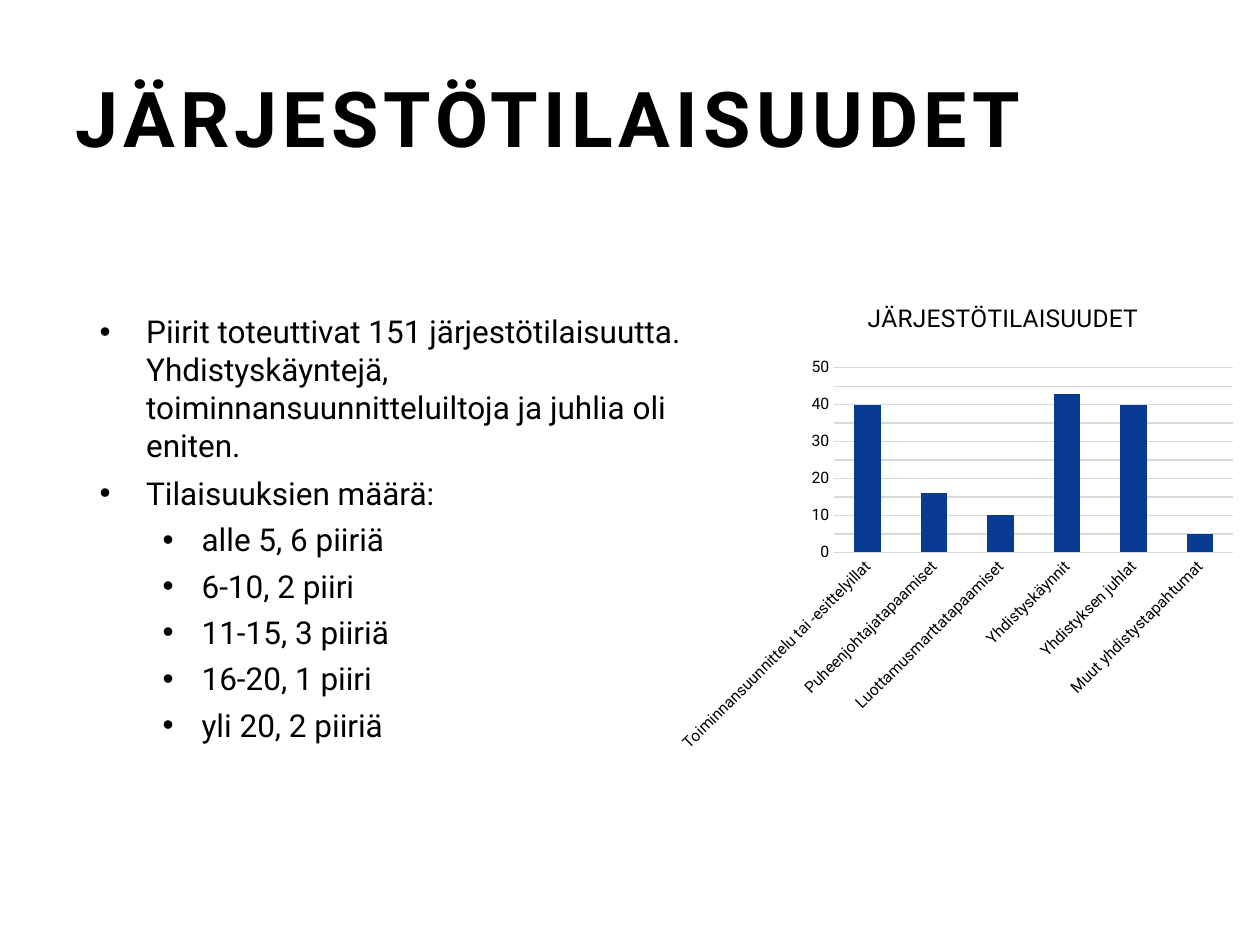
import copy
import dataclasses

import pptx
import pptx.chart.data
import pptx.dml.color
import pptx.enum.chart
import pptx.enum.text
import pptx.oxml
import pptx.oxml.ns
import pptx.util

Inches = pptx.util.Inches
Pt = pptx.util.Pt
qn = pptx.oxml.ns.qn


@dataclasses.dataclass(frozen=True)
class Theme:
    font: str = "Roboto"
    text: str = "000000"
    bar: str = "0A3B93"
    grid: str = "D9D9D9"
    title_size: float = 44
    body_size: float = 18
    chart_title_size: float = 14
    chart_size: float = 10
    axis_size: float = 9


# Per list level: text indent, bullet offset (inches), space before (points)
LEVELS = [(0.37, -0.37, 5.8), (0.81, -0.31, 4.9)]

BULLETS = [
    (0, "Piirit toteuttivat 151 järjestötilaisuutta. Yhdistyskäyntejä, "
        "toiminnansuunnitteluiltoja ja juhlia oli eniten."),
    (0, "Tilaisuuksien määrä:"),
    (1, "alle 5, 6 piiriä"),
    (1, "6-10, 2 piiri"),
    (1, "11-15, 3 piiriä"),
    (1, "16-20, 1 piiri"),
    (1, "yli 20, 2 piiriä"),
]

EVENTS = {
    "Toiminnansuunnittelu tai -esittelyillat": 40,
    "Puheenjohtajatapaamiset": 16,
    "Luottamusmarttatapaamiset": 10,
    "Yhdistyskäynnit": 43,
    "Yhdistyksen juhlat": 40,
    "Muut yhdistystapahtumat": 5,
}


class SlideBuilder:
    def __init__(self, slide, theme):
        self.slide = slide
        self.theme = theme

    def color(self, value):
        return pptx.dml.color.RGBColor.from_string(value)

    def style_font(self, font, size, bold=False):
        font.name = self.theme.font
        font.size = Pt(size)
        font.bold = bold
        font.color.rgb = self.color(self.theme.text)

    def place(self, shape, left, top, width, height):
        shape.left, shape.top = Inches(left), Inches(top)
        shape.width, shape.height = Inches(width), Inches(height)

    def title(self, text, *bounds):
        box = self.slide.shapes.title
        self.place(box, *bounds)
        frame = box.text_frame
        frame.text = text
        frame.auto_size = pptx.enum.text.MSO_AUTO_SIZE.NONE
        frame.vertical_anchor = pptx.enum.text.MSO_ANCHOR.MIDDLE
        para = frame.paragraphs[0]
        para.alignment = pptx.enum.text.PP_ALIGN.LEFT
        span = para.runs[0]
        self.style_font(span.font, self.theme.title_size, bold=True)
        span.font._element.set("spc", "300")

    def bullets(self, items, *bounds):
        box = self.slide.placeholders[1]
        self.place(box, *bounds)
        frame = box.text_frame
        frame.text = "\n".join(text for _, text in items)
        frame.auto_size = pptx.enum.text.MSO_AUTO_SIZE.NONE
        for index, (para, (level, _)) in enumerate(zip(frame.paragraphs, items)):
            indent, offset, space = LEVELS[level]
            para.level = level
            para.space_before = Pt(space if index else 0)
            properties = para._p.get_or_add_pPr()
            properties.set("marL", str(Inches(indent)))
            properties.set("indent", str(Inches(offset)))
            bullet = properties.makeelement(qn("a:buChar"), {"char": "•"})
            properties.append(bullet)
            self.style_font(para.runs[0].font, self.theme.body_size)

    def chart_layout(self, parent, position, **settings):
        """Put a manual layout, in fractions of the chart, into a chart part."""
        for old in parent.findall(qn("c:layout")):
            parent.remove(old)
        layout = parent.makeelement(qn("c:layout"), {})
        manual = layout.makeelement(qn("c:manualLayout"), {})
        layout.append(manual)
        for name, value in settings.items():
            manual.append(manual.makeelement(qn(f"c:{name}"), {"val": str(value)}))
        parent.insert(position, layout)

    def grid(self, axis):
        """Show major and minor gridlines in one line style."""
        axis.has_major_gridlines = axis.has_minor_gridlines = True
        line = axis.major_gridlines.format.line
        line.color.rgb = self.color(self.theme.grid)
        line.width = Pt(0.75)
        major = axis._element.find(qn("c:majorGridlines"))
        minor = axis._element.find(qn("c:minorGridlines"))
        minor.append(copy.deepcopy(major.find(qn("c:spPr"))))

    def column_chart(self, title, values, *bounds):
        data = pptx.chart.data.CategoryChartData()
        data.categories = list(values)
        data.add_series("Series 1", list(values.values()))
        kind = pptx.enum.chart.XL_CHART_TYPE.COLUMN_STACKED
        frame = self.slide.shapes.add_chart(kind, *map(Inches, bounds), data)
        chart = frame.chart
        self.style_font(chart.font, self.theme.chart_size)
        chart.has_legend = False

        # Chart title
        chart.has_title = True
        chart.chart_title.text_frame.text = title
        span = chart.chart_title.text_frame.paragraphs[0].runs[0]
        self.style_font(span.font, self.theme.chart_title_size)
        self.chart_layout(chart.chart_title._element, 1,
                          xMode="edge", yMode="edge", x=0.34, y=0.02)

        # Plot area and columns
        self.chart_layout(chart._chartSpace.chart.plotArea, 0, layoutTarget="inner",
                          xMode="edge", yMode="edge", x=0.29, y=0.17, w=0.69, h=0.39)
        plot = chart.plots[0]
        plot.gap_width, plot.overlap = 150, 100
        plot.vary_by_categories = False
        fill = plot.series[0].format.fill
        fill.solid()
        fill.fore_color.rgb = self.color(self.theme.bar)

        # Axes and grid
        for axis in (chart.category_axis, chart.value_axis):
            axis.major_tick_mark = pptx.enum.chart.XL_TICK_MARK.NONE
            axis.minor_tick_mark = pptx.enum.chart.XL_TICK_MARK.NONE
            axis.format.line.fill.background()
            self.style_font(axis.tick_labels.font, self.theme.axis_size)
        labels = chart.category_axis._element.find(qn("c:txPr"))
        labels.find(qn("a:bodyPr")).set("rot", str(-45 * 60000))
        scale = chart.value_axis
        scale.minimum_scale, scale.maximum_scale = 0, 50
        scale.major_unit, scale.minor_unit = 10, 5
        self.grid(scale)


def main():
    deck = pptx.Presentation()
    deck.slide_width, deck.slide_height = Inches(10), Inches(7.5)
    page = SlideBuilder(deck.slides.add_slide(deck.slide_layouts[1]), Theme())
    heading = "JÄRJESTÖTILAISUUDET"
    page.title(heading, 0.5, 0.3, 9, 1.25)
    page.bullets(BULLETS, 0.69, 2.43, 4.92, 4.27)
    page.column_chart(heading, EVENTS, 5.29, 2.28, 4.59, 3.76)
    deck.save("out.pptx")


if __name__ == "__main__":
    main()
